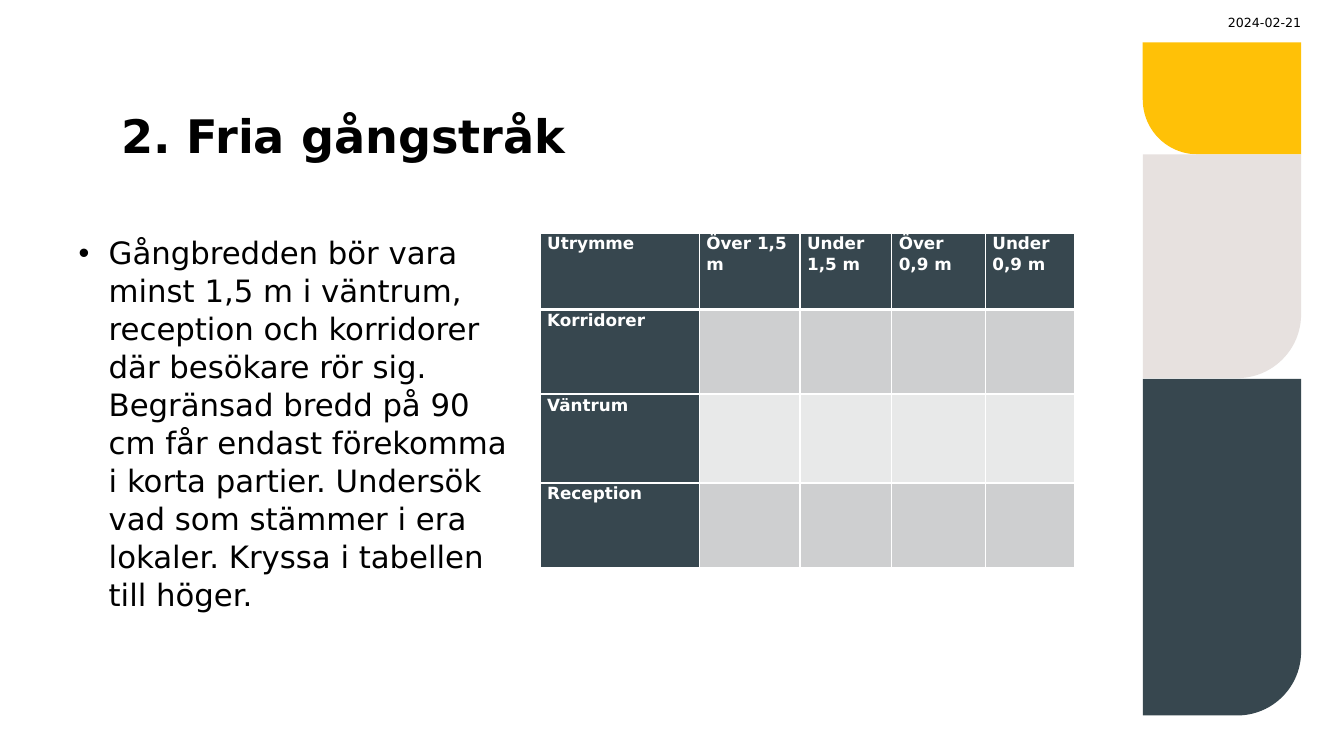
from dataclasses import dataclass

import pptx
import pptx.dml.color
import pptx.enum.shapes
import pptx.enum.text
import pptx.oxml
import pptx.oxml.ns
import pptx.util
from pptx.dml.color import RGBColor
from pptx.enum.text import MSO_ANCHOR, PP_ALIGN
from pptx.util import Cm, Pt

FONT = "DejaVu Sans"
BLACK = RGBColor(0x00, 0x00, 0x00)
WHITE = RGBColor(0xFF, 0xFF, 0xFF)
YELLOW = RGBColor(0xFF, 0xC1, 0x07)
BEIGE = RGBColor(0xE7, 0xE1, 0xDF)
SLATE = RGBColor(0x37, 0x47, 0x4F)
ROW_DARK = RGBColor(0xCE, 0xCF, 0xD0)
ROW_LIGHT = RGBColor(0xE8, 0xE9, 0xE9)


@dataclass
class Panel:
    top: float
    height: float
    rounding: float
    color: RGBColor
    flip_h: bool = False


PANELS = [
    Panel(1.07, 2.82, 0.489, YELLOW, flip_h=True),
    Panel(3.89, 5.64, 0.403, BEIGE),
    Panel(9.55, 8.48, 0.403, SLATE),
]
BODY = (
    "Gångbredden bör vara minst 1,5 m i väntrum, reception och korridorer "
    "där besökare rör sig. Begränsad bredd på 90 cm får endast förekomma "
    "i korta partier. Undersök vad som stämmer i era lokaler. "
    "Kryssa i tabellen till höger."
)
HEADERS = ["Utrymme", "Över 1,5 m", "Under\n1,5 m", "Över 0,9 m", "Under 0,9 m"]
ROOMS = ["Korridorer", "Väntrum", "Reception"]
COL_WIDTHS = [4.01, 2.54, 2.31, 2.36, 2.24]
ROW_HEIGHTS = [1.93, 2.13, 2.24, 2.13]


def place(sp, left: float, top: float, width: float, height: float) -> None:
    sp.left, sp.top, sp.width, sp.height = Cm(left), Cm(top), Cm(width), Cm(height)


def style_font(font, size: float, color: RGBColor, bold: bool = False) -> None:
    font.name, font.size, font.bold = FONT, Pt(size), bold
    font.color.rgb = color


def write(sp, text: str, size: float, anchor, align, bold: bool = False):
    """Fill a shape with one paragraph and no insets; return the paragraph."""
    tf = sp.text_frame
    tf.word_wrap = True
    tf.auto_size = pptx.enum.text.MSO_AUTO_SIZE.NONE
    tf.margin_left = tf.margin_top = tf.margin_right = tf.margin_bottom = 0
    tf.vertical_anchor = anchor
    tf.text = text
    p = tf.paragraphs[0]
    p.alignment = align
    style_font(p.font, size, BLACK, bold)
    return p


def add_panel(s, panel: Panel) -> None:
    sp = s.shapes.add_shape(
        pptx.enum.shapes.MSO_SHAPE.ROUND_1_RECTANGLE,
        Cm(28.8), Cm(panel.top), Cm(3.99), Cm(panel.height),
    )
    sp.adjustments[0] = panel.rounding
    sp.shadow.inherit = False
    sp.fill.solid()
    sp.fill.fore_color.rgb = panel.color
    sp.line.fill.background()
    xfrm = sp._element.spPr.xfrm
    xfrm.set("flipV", "1")
    if panel.flip_h:
        xfrm.set("flipH", "1")


def set_borders(cell, top: float, bottom: float) -> None:
    tcPr = cell._tc.get_or_add_tcPr()
    widths = {"lnL": 1, "lnR": 1, "lnT": top, "lnB": bottom}
    for i, (side, width) in enumerate(widths.items()):
        ln = pptx.oxml.parse_xml(
            f'<a:{side} {pptx.oxml.ns.nsdecls("a")} w="{Pt(width)}">'
            f'<a:solidFill><a:srgbClr val="{WHITE}"/></a:solidFill></a:{side}>'
        )
        tcPr.insert(i, ln)


def fill_cell(cell, text: str, color: RGBColor) -> None:
    cell.fill.solid()
    cell.fill.fore_color.rgb = color
    cell.margin_left = cell.margin_right = Cm(0.18)
    cell.margin_top = cell.margin_bottom = 0
    cell.text_frame.text = text
    for p in cell.text_frame.paragraphs:
        p.line_spacing = 1.07
        style_font(p.font, 12, WHITE, bold=True)


def add_width_table(s) -> None:
    table = s.shapes.add_table(
        len(ROW_HEIGHTS), len(COL_WIDTHS), Cm(13.61), Cm(5.87),
        Cm(sum(COL_WIDTHS)), Cm(sum(ROW_HEIGHTS)),
    ).table
    table.first_col = True
    for col, width in zip(table.columns, COL_WIDTHS):
        col.width = Cm(width)
    rows = [HEADERS] + [[room] + [""] * (len(HEADERS) - 1) for room in ROOMS]
    for r, texts in enumerate(rows):
        table.rows[r].height = Cm(ROW_HEIGHTS[r])
        band = ROW_DARK if r % 2 else ROW_LIGHT
        for c, text in enumerate(texts):
            cell = table.cell(r, c)
            fill_cell(cell, text, SLATE if r == 0 or c == 0 else band)
            set_borders(cell, top=3 if r == 1 else 1, bottom=3 if r == 0 else 1)


def main() -> None:
    prs = pptx.Presentation()
    prs.slide_width, prs.slide_height = Cm(33.87), Cm(19.05)
    s = prs.slides.add_slide(prs.slide_layouts[1])

    # Decorative panels on the right
    for panel in PANELS:
        add_panel(s, panel)

    # Title
    title = s.shapes.title
    place(title, 3.05, 1.19, 24, 2.92)
    write(title, "2. Fria gångstråk", 33, MSO_ANCHOR.BOTTOM, PP_ALIGN.LEFT, bold=True)

    # Bulleted instruction
    body = s.placeholders[1]
    place(body, 1.98, 5.87, 10.97, 11.99)
    p = write(body, BODY, 22, MSO_ANCHOR.TOP, PP_ALIGN.LEFT)
    p.space_before = Pt(10)
    p.line_spacing = 1.03
    pPr = p._p.get_or_add_pPr()
    pPr.set("marL", str(Cm(0.76)))
    pPr.set("indent", str(-Cm(0.76)))

    # Date
    date = s.shapes.add_textbox(Cm(30.28), Cm(0.38), Cm(2.51), Cm(0.38))
    write(date, "2024-02-21", 9, MSO_ANCHOR.MIDDLE, PP_ALIGN.RIGHT)

    # Table of passage widths
    add_width_table(s)

    prs.save("out.pptx")


if __name__ == "__main__":
    main()
